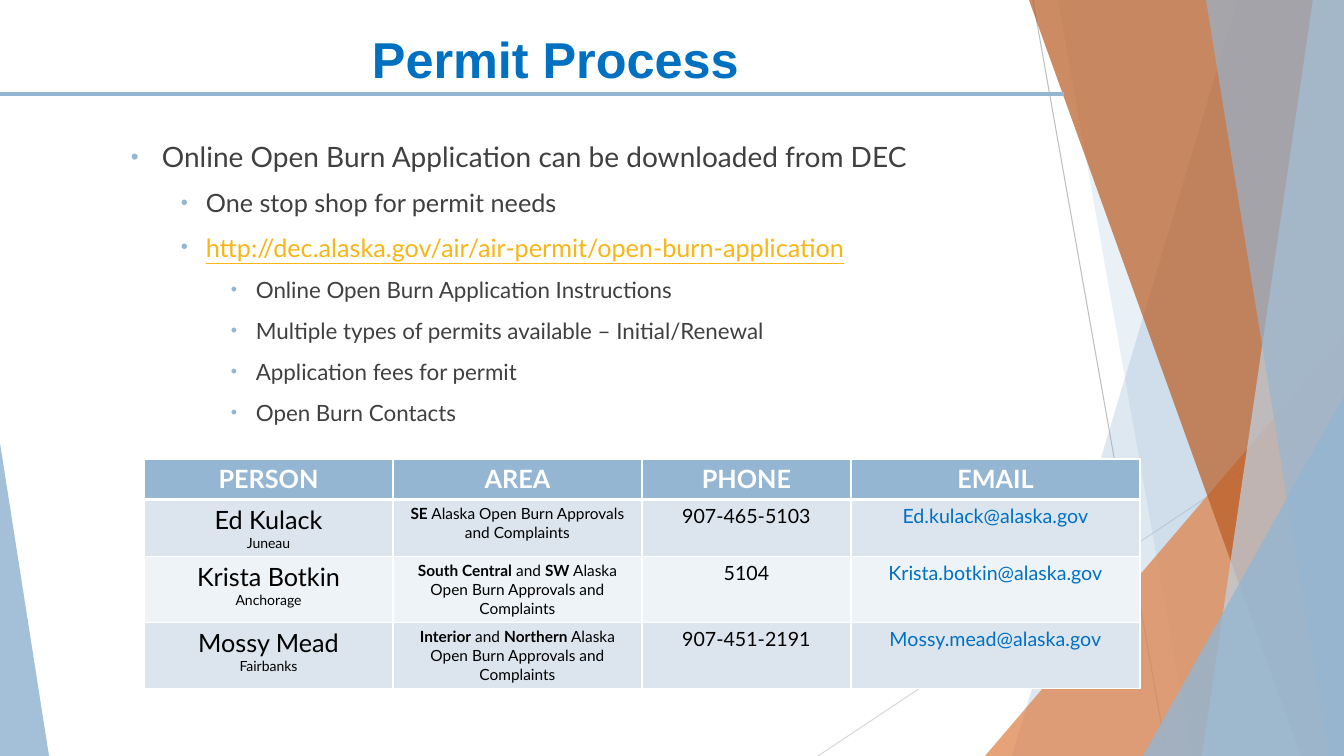
from typing import NamedTuple

from pptx import Presentation
from pptx.dml.color import RGBColor
from pptx.enum.shapes import MSO_CONNECTOR, MSO_SHAPE
from pptx.enum.text import MSO_ANCHOR, PP_ALIGN
from pptx.oxml.ns import qn
from pptx.util import Emu, Pt
from lxml.etree import SubElement

PX_PER_INCH = 100.8
WIDTH, HEIGHT = 1344, 756
BLUE, ORANGE, RUST, PALE_BLUE = "94B6D2", "DD8047", "B95B22", "BFD3E4"
WHITE, BLACK, TEXT_GREY, LINK_BLUE, LINK_GOLD = "FFFFFF", "000000", "404040", "0070C0", "F7B615"
BANDS = ("DCE5EE", "EEF3F7")


class Line(NamedTuple):
    start: tuple[int, int]
    end: tuple[int, int]
    colour: str
    points: float


class Facet(NamedTuple):
    """A four-sided panel running to the right edge of the slide."""
    top_left: int
    bottom_left: int
    colour: str
    opacity: int


class Triangle(NamedTuple):
    left: int
    top: int
    width: int
    apex: int
    colour: str
    opacity: int


class Bullet(NamedTuple):
    level: int
    text: str
    colour: str = TEXT_GREY


class Level(NamedTuple):
    margin: int
    hang: int
    size: int


class Contact(NamedTuple):
    """One table row; words between asterisks in the area are bold."""
    person: str
    town: str
    area: str
    phone: str
    email: str


DECORATION = [
    Line((1033, 0), (1167, 756), "BFBFBF", 0.75),
    Line((1344, 406), (818, 756), "D9D9D9", 0.75),
    Facet(1238, 1012, BLUE, 30),
    Facet(1058, 1192, BLUE, 20),
    Triangle(985, 336, 359, 1, ORANGE, 72),
    Facet(1029, 1301, RUST, 70),
    Facet(1313, 1202, PALE_BLUE, 70),
    Facet(1206, 1329, BLUE, 65),
    Triangle(1143, 396, 201, 1, BLUE, 80),
    Triangle(0, 443, 49, 0, BLUE, 85),
    Line((0, 94), (1064, 94), BLUE, 3),
]
LEVELS = [Level(82, 31, 20), Level(126, 25, 18), Level(176, 25, 16)]
BULLETS = [
    Bullet(0, "Online Open Burn Application can be downloaded from DEC"),
    Bullet(1, "One stop shop for permit needs"),
    Bullet(1, "http://dec.alaska.gov/air/air-permit/open-burn-application", LINK_GOLD),
    Bullet(2, "Online Open Burn Application Instructions"),
    Bullet(2, "Multiple types of permits available – Initial/Renewal"),
    Bullet(2, "Application fees for permit"),
    Bullet(2, "Open Burn Contacts"),
]
HEADINGS = ("PERSON", "AREA", "PHONE", "EMAIL")
CONTACTS = [
    Contact("Ed Kulack", "Juneau", "*SE* Alaska Open Burn Approvals and Complaints",
            "907-465-5103", "Ed.kulack@alaska.gov"),
    Contact("Krista Botkin", "Anchorage",
            "*South Central* and *SW* Alaska Open Burn Approvals and Complaints",
            "5104", "Krista.botkin@alaska.gov"),
    Contact("Mossy Mead", "Fairbanks",
            "*Interior* and *Northern* Alaska Open Burn Approvals and Complaints",
            "907-451-2191", "Mossy.mead@alaska.gov"),
]
COLUMN_WIDTHS = (249, 249, 209, 289)
ROW_HEIGHTS = (40, 57, 66, 66)


def px(length: int) -> Emu:
    return Emu(round(length * 914400 / PX_PER_INCH))


def rgb(colour: str) -> RGBColor:
    return RGBColor.from_string(colour)


def set_font(font, size: int, colour: str, bold: bool = False, name: str = "Lato") -> None:
    font.name, font.size, font.bold = name, Pt(size), bold
    font.color.rgb = rgb(colour)


def draw_line(slide, line: Line) -> None:
    connector = slide.shapes.add_connector(
        MSO_CONNECTOR.STRAIGHT, *map(px, line.start + line.end))
    connector.line.color.rgb = rgb(line.colour)
    connector.line.width = Pt(line.points)
    SubElement(connector._element.spPr, qn("a:effectLst"))


def draw_panel(slide, panel: Facet | Triangle) -> None:
    if isinstance(panel, Facet):
        builder = slide.shapes.build_freeform(px(panel.top_left), 0)
        corners = [(WIDTH, 0), (WIDTH, HEIGHT), (panel.bottom_left, HEIGHT)]
        builder.add_line_segments([(px(x), px(y)) for x, y in corners])
        shape = builder.convert_to_shape()
    else:
        shape = slide.shapes.add_shape(
            MSO_SHAPE.ISOSCELES_TRIANGLE, px(panel.left), px(panel.top),
            px(panel.width), px(HEIGHT - panel.top))
        shape.adjustments[0] = panel.apex
    shape.shadow.inherit = False
    shape.line.fill.background()
    shape.fill.solid()
    shape.fill.fore_color.rgb = rgb(panel.colour)
    colour = shape._element.spPr.find(qn("a:solidFill"))[0]
    SubElement(colour, qn("a:alpha"), val=str(panel.opacity * 1000))


def add_text_frame(slide, left: int, top: int, width: int, height: int):
    frame = slide.shapes.add_textbox(px(left), px(top), px(width), px(height)).text_frame
    frame.word_wrap = True
    frame.vertical_anchor = MSO_ANCHOR.TOP
    return frame


def add_title(slide) -> None:
    frame = add_text_frame(slide, 297, 18, 517, 90)
    frame.margin_top = px(10)
    paragraph = frame.paragraphs[0]
    paragraph.text = "Permit Process"
    paragraph.alignment = PP_ALIGN.CENTER
    set_font(paragraph.font, 36, LINK_BLUE, True, "Arial")


def add_bullets(slide) -> None:
    frame = add_text_frame(slide, 70, 135, 983, 554)
    for index, bullet in enumerate(BULLETS):
        paragraph = frame.add_paragraph() if index else frame.paragraphs[0]
        paragraph.text = bullet.text
        paragraph.level = bullet.level
        paragraph.space_before = Pt(10 if index else 0)
        level = LEVELS[bullet.level]
        properties = paragraph._p.get_or_add_pPr()
        properties.set("marL", str(px(level.margin)))
        properties.set("indent", str(px(-level.hang)))
        SubElement(SubElement(properties, qn("a:buClr")), qn("a:srgbClr"), val=BLUE)
        SubElement(properties, qn("a:buSzPct"), val="80000")
        SubElement(properties, qn("a:buFont"), typeface="Arial")
        SubElement(properties, qn("a:buChar"), char="•")
        set_font(paragraph.font, level.size, bullet.colour)
        paragraph.font.underline = bullet.colour == LINK_GOLD


def style_cell(cell, row: int) -> None:
    """Add white borders, thicker under the heading row, and the row's fill."""
    thick_side = {0: "B", 1: "T"}.get(row)
    for side in "LRTB":
        width = Pt(3 if side == thick_side else 1)
        border = SubElement(cell._tc.get_or_add_tcPr(), qn(f"a:ln{side}"), w=str(width))
        SubElement(SubElement(border, qn("a:solidFill")), qn("a:srgbClr"), val=WHITE)
    cell.fill.solid()
    cell.fill.fore_color.rgb = rgb(BANDS[(row - 1) % 2] if row else BLUE)


def write_line(paragraph, text: str, size: int, colour: str = BLACK, bold: bool = False) -> None:
    paragraph.alignment = PP_ALIGN.CENTER
    set_font(paragraph.font, size, colour, bold)
    for index, part in enumerate(text.split("*")):
        if part:
            run = paragraph.add_run()
            run.text = part
            if index % 2:
                run.font.bold = True


def add_contacts(slide) -> None:
    table = slide.shapes.add_table(
        len(ROW_HEIGHTS), len(COLUMN_WIDTHS), px(144), px(459),
        px(sum(COLUMN_WIDTHS)), px(sum(ROW_HEIGHTS))).table
    table.horz_banding = False
    for column, width in zip(table.columns, COLUMN_WIDTHS):
        column.width = px(width)
    for index, (row, height) in enumerate(zip(table.rows, ROW_HEIGHTS)):
        row.height = px(height)
        for cell in row.cells:
            style_cell(cell, index)
    for column, heading in enumerate(HEADINGS):
        write_line(table.cell(0, column).text_frame.paragraphs[0], heading, 18, WHITE, True)
    for row, contact in enumerate(CONTACTS, start=1):
        person, area, phone, email = (table.cell(row, column).text_frame for column in range(4))
        write_line(person.paragraphs[0], contact.person, 18)
        write_line(person.add_paragraph(), contact.town, 10)
        write_line(area.paragraphs[0], contact.area, 11)
        write_line(phone.paragraphs[0], contact.phone, 14)
        write_line(email.paragraphs[0], contact.email, 14, LINK_BLUE)


def main() -> None:
    presentation = Presentation()
    presentation.slide_width, presentation.slide_height = px(WIDTH), px(HEIGHT)
    slide = presentation.slides.add_slide(presentation.slide_layouts[6])
    for part in DECORATION:
        (draw_line if isinstance(part, Line) else draw_panel)(slide, part)
    add_title(slide)
    add_bullets(slide)
    add_contacts(slide)
    presentation.save("out.pptx")


if __name__ == "__main__":
    main()
